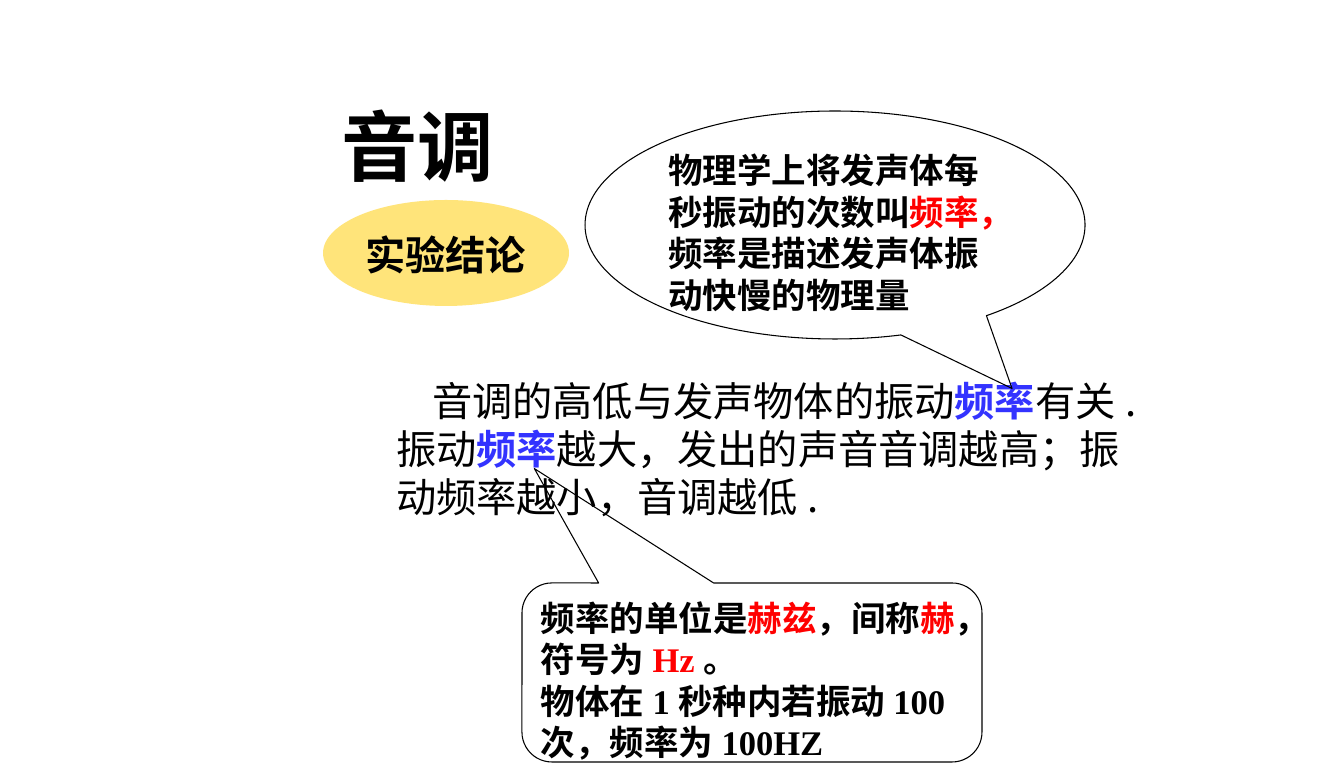
from pptx import Presentation
from pptx.dml.color import RGBColor
from pptx.enum.shapes import MSO_SHAPE
from pptx.enum.text import MSO_ANCHOR, PP_ALIGN
from pptx.util import Emu, Pt
from lxml import etree

OVAL = MSO_SHAPE.OVAL
BUBBLE = MSO_SHAPE.OVAL_CALLOUT
ROUND = MSO_SHAPE.ROUNDED_RECTANGULAR_CALLOUT
TOP = MSO_ANCHOR.TOP
LEFT = PP_ALIGN.LEFT

PX = 914400 / 103.5
BLACK, RED, BLUE, GOLD = "000000", "FF0000", "3333FF", "FFCC00"
SERIF, SANS, CJK = "Times New Roman", "Arial", "Noto Sans CJK JP"


def px(n):
    return Emu(round(n * PX))


def rgb(code):
    return RGBColor.from_string(code)


deck = Presentation()
deck.slide_width, deck.slide_height = px(1344), px(774)
slide = deck.slides.add_slide(deck.slide_layouts[6])
shapes = slide.shapes

# Yellow oval behind the heading
oval = shapes.add_shape(OVAL, px(323), px(200), px(246), px(106))
oval.shadow.inherit = False
oval.fill.solid()
oval.fill.fore_color.rgb = rgb(GOLD)
oval.line.fill.background()
tint = oval.fill._xPr.find(".//{*}srgbClr")
etree.SubElement(tint, tint.tag.replace("srgbClr", "alpha"), val="52000")

# Text boxes and callouts: runs are (text, colour, bold)
label = shapes.add_textbox(px(355), px(225), px(182), px(59))
title = shapes.add_textbox(px(331), px(94), px(238), px(104))
body = shapes.add_textbox(px(386), px(371), px(770), px(156))
define = shapes.add_shape(BUBBLE, px(585), px(111), px(500), px(228))
unit = shapes.add_shape(ROUND, px(522), px(583), px(460), px(179))

for call, tail in [(define, (0.354, 0.717)), (unit, (-0.473, -1.139, 0.167))]:
    call.shadow.inherit = False
    call.fill.background()
    call.line.color.rgb = rgb(BLACK)
    call.line.width = Pt(0.75)
    for i, value in enumerate(tail):
        call.adjustments[i] = value

texts = [
    (label, SERIF, 28, [[("实验结论", BLACK, True)]]),
    (title, SERIF, 53, [[("音调", BLACK, True)]]),
    (body, CJK, 28, [[
        ("音调的高低与发声物体的振动", BLACK, False),
        ("频率", BLUE, True),
        ("有关.振动", BLACK, False),
        ("频率", BLUE, True),
        ("越大，发出的声音音调越高；振动频率越小，音调越低.", BLACK, False),
    ]]),
    (define, SANS, 24, [[
        ("物理学上将发声体每秒振动的次数叫", BLACK, True),
        ("频率，", RED, True),
        ("频率是描述发声体振动快慢的物理量", BLACK, True),
    ]]),
    (unit, SERIF, 24, [
        [
            ("频率的单位是", BLACK, True),
            ("赫兹", RED, True),
            ("，间称", BLACK, True),
            ("赫", RED, True),
            ("，符号为", BLACK, True),
            ("Hz", RED, True),
            ("。", BLACK, True),
        ],
        [("物体在1秒种内若振动100次，频率为100HZ", BLACK, True)],
    ]),
]
for box, font, size, paras in texts:
    frame = box.text_frame
    frame.word_wrap = True
    frame.vertical_anchor = TOP
    for i, runs in enumerate(paras):
        para = frame.add_paragraph() if i else frame.paragraphs[0]
        para.alignment = LEFT
        for words, color, bold in runs:
            run = para.add_run()
            run.text = words
            run.font.name = font
            run.font.size = Pt(size)
            run.font.bold = bold
            run.font.color.rgb = rgb(color)

# First-line indent of the conclusion
body.text_frame.paragraphs[0]._p.get_or_add_pPr().set("indent", str(px(36)))

deck.save("out.pptx")
